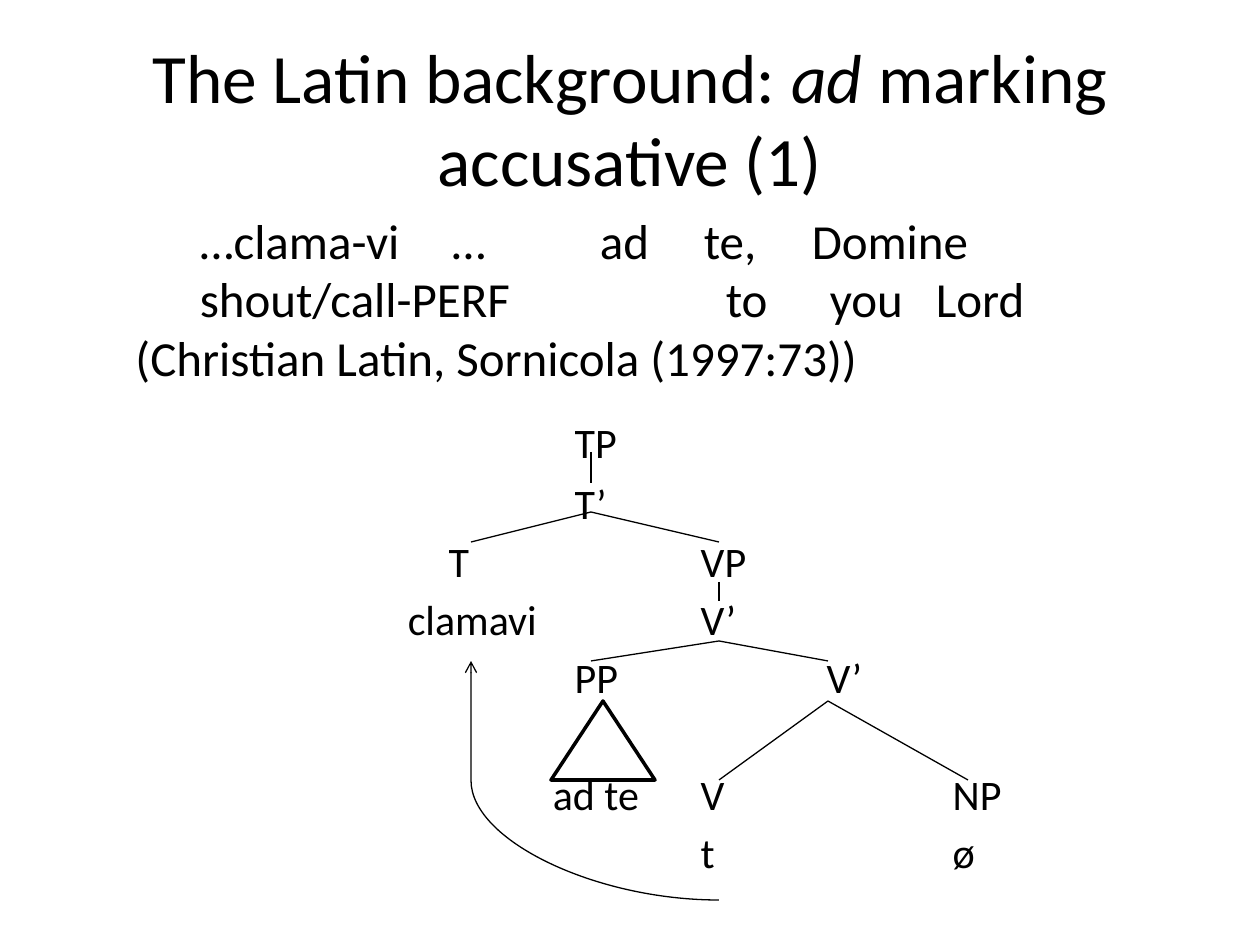
from lxml import etree
from pptx import Presentation
from pptx.enum import shapes, text
from pptx.dml.color import RGBColor
from pptx.oxml import ns
from pptx.util import Pt

PX = 914400 / 126
COLORS = {"ink": "000000", "paper": "FFFFFF"}
INK = RGBColor.from_string(COLORS["ink"])


def add_text(box, rows, **fmt):
    tb = s.shapes.add_textbox(*[round(v * PX) for v in box])
    tf = tb.text_frame
    tf.word_wrap = True
    for i, (before, stops, runs) in enumerate(rows):
        p = tf.paragraphs[0] if i == 0 else tf.add_paragraph()
        p.space_before = Pt(before)
        if stops:
            tabs = etree.SubElement(p._p.get_or_add_pPr(), ns.qn("a:tabLst"))
            for x in stops:
                pos = round(x * PX) - tb.left - tf.margin_left
                etree.SubElement(tabs, ns.qn("a:tab"), pos=str(pos), algn="l")
        for words, extra in runs:
            r = p.add_run()
            r.text = words
            r.font.color.rgb = INK
            for key, value in {"name": "Calibri", **fmt, **extra}.items():
                setattr(r.font, key, value)
    return tf


def add_line(kind, x1, y1, x2, y2):
    c = s.shapes.add_connector(kind, *[round(v * PX) for v in (x1, y1, x2, y2)])
    c.line.color.rgb = INK
    c.line.width = Pt(0.75)
    etree.SubElement(c._element.spPr, ns.qn("a:effectLst"))
    return c


prs = Presentation()
prs.slide_width, prs.slide_height = round(1260 * PX), round(945 * PX)
s = prs.slides.add_slide(prs.slide_layouts[6])
s.background.fill.solid()
s.background.fill.fore_color.rgb = RGBColor.from_string(COLORS["paper"])

title = [("The Latin background: ", {}), ("ad ", {"italic": True}), ("marking accusative (1)", {})]
tf = add_text((63, 38, 1134, 158), [(0, [], title)], size=Pt(39.6))
tf.vertical_anchor = text.MSO_ANCHOR.MIDDLE
tf.paragraphs[0].alignment = text.PP_ALIGN.CENTER

tree = [
    (0, [575], [("\t", {"size": Pt(32)}), ("TP", {})]),
    (4.4, [575], [("\tT’", {})]),
    (4.4, [449, 701], [("\tT\tVP", {})]),
    (4.4, [408, 701], [("\tclamavi\tV’", {})]),
    (4.4, [575, 827], [("\tPP\tV’", {})]),
    (38, [553, 701, 953], [("\tad te\tV\tNP", {})]),
    (4.4, [701, 953], [("\tt\tø", {})]),
]
add_text((58, 396, 1134, 533), tree, size=Pt(24))

example = [
    (0, [200, 452, 600, 704, 812], [("\t…clama-vi\t…\tad\tte,\tDomine", {})]),
    (0, [200, 726, 830, 936], [("\tshout/call-PERF\tto\tyou\tLord", {})]),
    (0, [], [("(Christian Latin, Sornicola (1997:73))", {})]),
]
add_text((123, 204, 1002, 190), example, size=Pt(28))

branches = [
    (591, 452, 483, [591]),
    (591, 512, 542, [471, 719]),
    (719, 582, 601, [719]),
    (719, 641, 661, [591, 828]),
    (828, 701, 780, [719, 968]),
]
for x, top, bottom, children in branches:
    for child in children:
        add_line(shapes.MSO_CONNECTOR.STRAIGHT, x, top, child, bottom)

sp = s.shapes.add_shape(shapes.MSO_SHAPE.ISOSCELES_TRIANGLE,
                        *[round(v * PX) for v in (551, 701, 104, 79)])
sp.shadow.inherit = False
sp.fill.solid()
sp.fill.fore_color.rgb = RGBColor.from_string(COLORS["paper"])
sp.line.color.rgb = INK
sp.line.width = Pt(2)

move = add_line(shapes.MSO_CONNECTOR.CURVE, 471, 661, 719, 900)
spPr = move._element.spPr
spPr.find(ns.qn("a:xfrm")).set("rot", "10800000")
geom = spPr.find(ns.qn("a:prstGeom"))
guides = geom.find(ns.qn("a:avLst"))
if guides is None:
    guides = etree.SubElement(geom, ns.qn("a:avLst"))
etree.SubElement(guides, ns.qn("a:gd"), name="adj1", fmla="val 100000")
etree.SubElement(spPr.find(ns.qn("a:ln")), ns.qn("a:tailEnd"), type="arrow")

prs.save("out.pptx")
